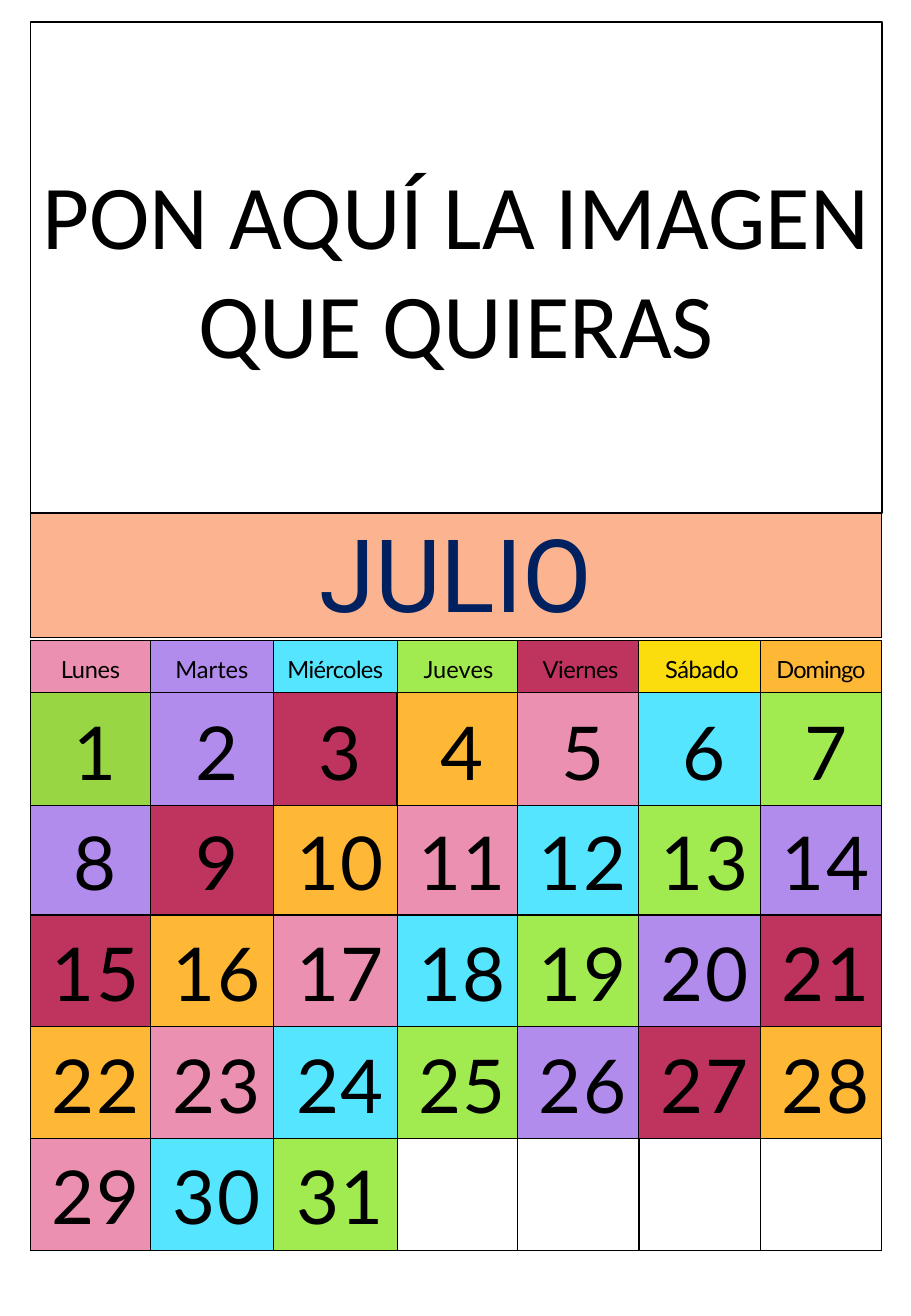
from lxml import etree
from pptx import Presentation
from pptx.dml.color import RGBColor
from pptx.enum.shapes import MSO_SHAPE
from pptx.enum.text import MSO_ANCHOR, PP_ALIGN
from pptx.oxml.ns import qn
from pptx.util import Inches, Pt

RECTANGLE = MSO_SHAPE.RECTANGLE
MIDDLE = MSO_ANCHOR.MIDDLE
CENTER = PP_ALIGN.CENTER

BLACK = RGBColor(0x00, 0x00, 0x00)
WHITE = RGBColor(0xFF, 0xFF, 0xFF)
NAVY = RGBColor(0x00, 0x20, 0x60)
PEACH = RGBColor(0xFB, 0xB3, 0x90)
PINK = RGBColor(0xEB, 0x90, 0xB0)
PURPLE = RGBColor(0xB1, 0x8C, 0xEC)
CYAN = RGBColor(0x55, 0xE5, 0xFF)
LIME = RGBColor(0xA1, 0xEB, 0x51)
GREEN = RGBColor(0x99, 0xD6, 0x43)
CRIMSON = RGBColor(0xBE, 0x34, 0x5E)
YELLOW = RGBColor(0xFB, 0xDD, 0x0D)
ORANGE = RGBColor(0xFF, 0xB8, 0x36)

LEFT, WIDTH = Inches(0.25), Inches(7.01)
THIN, THICK = 0.75, 1

# name, fill, letter spacing in points, left indent in inches
WEEKDAYS = [
    ("Lunes", PINK, -0.2, 0),
    ("Martes", PURPLE, 0, 0),
    ("Miércoles", CYAN, -0.4, 0),
    ("Jueves", LIME, 0, 0.02),
    ("Viernes", CRIMSON, -0.3, 0.04),
    ("Sábado", YELLOW, -0.3, 0.04),
    ("Domingo", ORANGE, -0.6, 0),
]
COLUMN_WIDTHS = [0.99, 1.01, 1.02, 0.99, 1, 1, 1]
ROW_HEIGHTS = [0.43, 0.93, 0.9, 0.92, 0.92, 0.92]
TOP_MARGINS = [0.05, 0.04, 0.02, 0.03, 0.03, 0.03]
DAY_COLORS = [LIME, PURPLE, CRIMSON, ORANGE, PINK, CYAN]
LAST_DAY = 31
THICK_CELLS = {(1, 0), (1, 1), (1, 2), (5, 5), (5, 6)}
NEIGHBOURS = {"lnL": (0, -1), "lnR": (0, 1), "lnT": (-1, 0), "lnB": (1, 0)}


def format_cell(cell, fill, borders):
    """Fill the cell and draw its borders, given as {edge tag: points}."""
    cell.fill.solid()
    cell.fill.fore_color.rgb = fill
    tcPr = cell._tc.get_or_add_tcPr()
    for i, (edge, points) in enumerate(borders.items()):
        ln = etree.Element(qn("a:" + edge), w=str(Pt(points)))
        solid = etree.SubElement(ln, qn("a:solidFill"))
        etree.SubElement(solid, qn("a:srgbClr"), val=str(BLACK))
        tcPr.insert(i, ln)


def write_cell(cell, text, font, size, color, margin_top, space_before,
               spacing=0, indent=0):
    cell.vertical_anchor = MIDDLE
    cell.margin_left = cell.margin_right = cell.margin_bottom = 0
    cell.margin_top = Inches(margin_top)
    p = cell.text_frame.paragraphs[0]
    p.alignment = CENTER
    p.space_before = Pt(space_before)
    p._p.get_or_add_pPr().set("marL", str(Inches(indent)))
    p.font.name = font
    p.font.size = Pt(size)
    p.font.color.rgb = color
    r = p.add_run()
    r.text = text
    r._r.get_or_add_rPr().set("spc", str(round(spacing * 100)))


prs = Presentation()
prs.slide_width = Inches(7.5)
prs.slide_height = Inches(10.83)
s = prs.slides.add_slide(prs.slide_layouts[6])

# Month banner
frame = s.shapes.add_table(1, 1, LEFT, Inches(4.22), WIDTH, Inches(1.05))
banner = frame.table
banner.first_row = banner.horz_banding = False
banner.rows[0].height = Inches(0.41)
frame.height = Inches(1.05)
month = banner.cell(0, 0)
format_cell(month, PEACH, {"lnL": THIN, "lnR": THIN, "lnT": THIN, "lnB": THICK})
write_cell(month, "JULIO", "Roboto", 60, NAVY, 0.05, 4.2)

# Calendar grid
calendar = s.shapes.add_table(len(ROW_HEIGHTS), len(WEEKDAYS), LEFT,
                              Inches(5.27), WIDTH, Inches(5.02)).table
calendar.first_row = calendar.horz_banding = False
for column, width in zip(calendar.columns, COLUMN_WIDTHS):
    column.width = Inches(width)

for row, (height, margin) in enumerate(zip(ROW_HEIGHTS, TOP_MARGINS)):
    calendar.rows[row].height = Inches(height)
    for col, (name, fill, spacing, indent) in enumerate(WEEKDAYS):
        cell = calendar.cell(row, col)
        day = (row - 1) * len(WEEKDAYS) + col + 1
        if row == 0:
            write_cell(cell, name, "Lato", 14, BLACK, margin, 4.2, spacing, indent)
        elif day <= LAST_DAY:
            fill = GREEN if day == 1 else DAY_COLORS[(day - 1) % len(DAY_COLORS)]
            write_cell(cell, str(day), "Lato", 44, BLACK, margin, 4.8, 1, 0.08)
        else:
            fill = WHITE
        # An edge is thick when a cell on either side of it is thick
        borders = {
            edge: THICK if THICK_CELLS & {(row, col), (row + dr, col + dc)} else THIN
            for edge, (dr, dc) in NEIGHBOURS.items()
        }
        format_cell(cell, fill, borders)

# Frame for the picture of the month
sp = s.shapes.add_shape(RECTANGLE, LEFT, Inches(0.18), WIDTH, Inches(4.04))
sp.shadow.inherit = False
sp.fill.solid()
sp.fill.fore_color.rgb = WHITE
sp.line.color.rgb = BLACK
sp.line.width = Pt(1)
tf = sp.text_frame
tf.word_wrap = True
tf.vertical_anchor = MIDDLE
p = tf.paragraphs[0]
p.text = "PON AQUÍ LA IMAGEN QUE QUIERAS"
p.alignment = CENTER
p.font.name = "Calibri"
p.font.size = Pt(54)
p.font.color.rgb = BLACK

prs.save("out.pptx")
